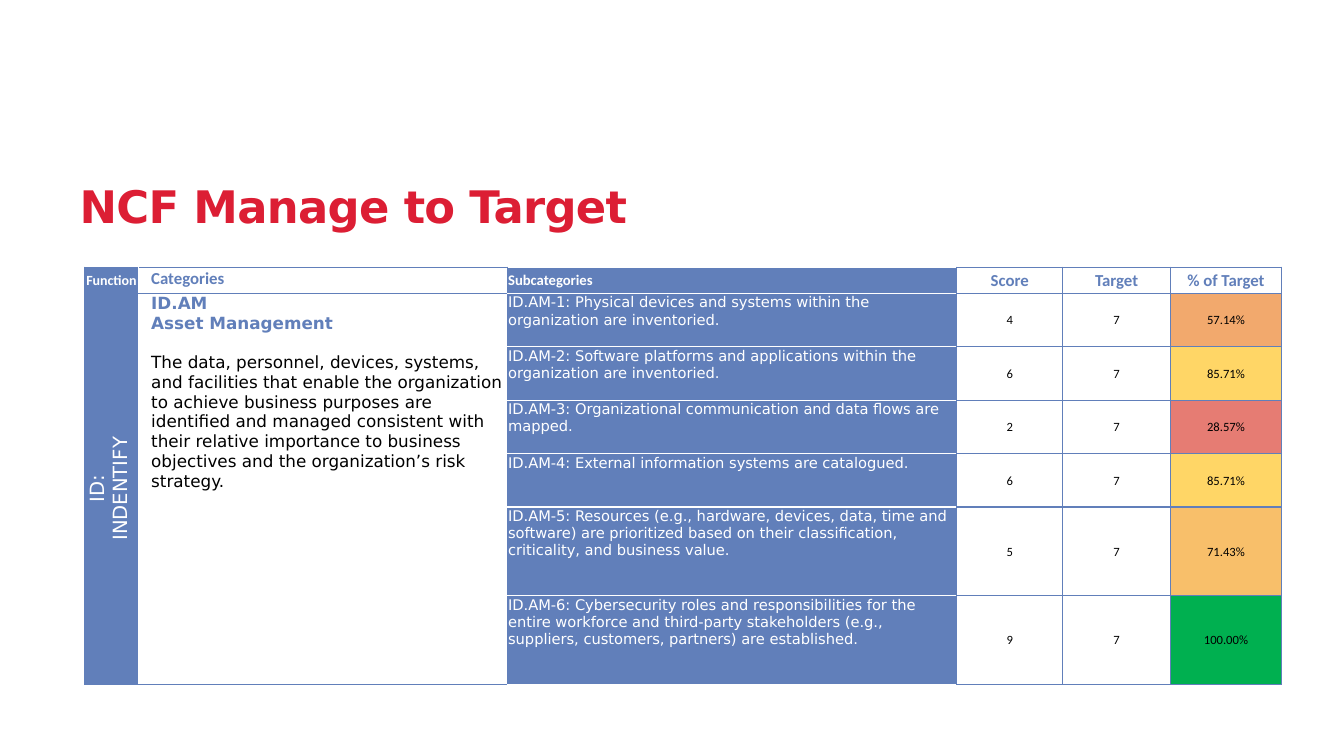
from lxml.etree import SubElement
from pptx import Presentation
from pptx.dml.color import RGBColor
from pptx.enum.text import MSO_ANCHOR, PP_ALIGN
from pptx.oxml.ns import qn
from pptx.util import Inches, Pt

BLUE, WHITE, BLACK, RED = "617FBA", "FFFFFF", "000000", "DC1E34"
SANS, CALIBRI = "DejaVu Sans", "Calibri"
COLS = [0.53, 3.66, 4.46, 1.05, 1.07, 1.1]
ROWS = [0.26] + [0.53] * 4 + [0.88] * 2
TARGET = 7

HEADS = [
    # label, size, colour, fill
    ("Function", 10, WHITE, BLUE),
    ("Categories", 12, BLUE, WHITE),
    ("Subcategories", 10.5, WHITE, BLUE),
    ("Score", 12, BLUE, WHITE),
    ("Target", 12, BLUE, WHITE),
    ("% of Target", 12, BLUE, WHITE),
]
ITEMS = [
    # subcategory, score, share of target, fill of the share
    ("Physical devices and systems within the organization are inventoried.",
     4, "57.14%", "F2A96D"),
    ("Software platforms and applications within the organization are inventoried.",
     6, "85.71%", "FFD666"),
    ("Organizational communication and data flows are mapped.",
     2, "28.57%", "E67C73"),
    ("External information systems are catalogued.",
     6, "85.71%", "FFD666"),
    ("Resources (e.g., hardware, devices, data, time and software) are prioritized "
     "based on their classification, criticality, and business value.",
     5, "71.43%", "F8BF6A"),
    ("Cybersecurity roles and responsibilities for the entire workforce and "
     "third-party stakeholders (e.g., suppliers, customers, partners) are established.",
     9, "100.00%", "00B050"),
]
ABOUT = ("The data, personnel, devices, systems, and facilities that enable the "
         "organization to achieve business purposes are identified and managed "
         "consistent with their relative importance to business objectives and "
         "the organization’s risk strategy.")

# Border colours by column: left, top, right, bottom
EDGES = {
    0: (BLUE, BLUE, WHITE, BLUE),
    1: (WHITE, BLUE, BLUE, BLUE),
    2: (BLUE, WHITE, BLUE, WHITE),
}


def color(code):
    return RGBColor.from_string(code)


def write(frame, text, size=12, font=SANS, ink=BLACK, bold=False,
          align=PP_ALIGN.LEFT, indent=0, before=0, more=False):
    """Write one paragraph; more=True adds it below the text already there."""
    para = frame.add_paragraph() if more else frame.paragraphs[0]
    para.alignment = align
    if before:
        para.space_before = Pt(before)
    if indent:
        props = para._p.get_or_add_pPr()
        props.set("marL", str(Inches(indent)))
        props.set("indent", "0")
    run = para.add_run()
    run.text = text
    run.font.size, run.font.name, run.font.bold = Pt(size), font, bold
    run.font.color.rgb = color(ink)
    return para


def style(cell, col, fill, anchor=MSO_ANCHOR.MIDDLE):
    """Set the borders, fill and margins of a cell and return its text frame."""
    props = cell._tc.get_or_add_tcPr()
    for side, ink in zip("LTRB", EDGES.get(col, (BLUE,) * 4)):
        # The schema wants the order left, right, top, bottom
        line = SubElement(props, qn(f"a:ln{side}"), w=str(Pt(1)))
        solid = SubElement(line, qn("a:solidFill"))
        SubElement(solid, qn("a:srgbClr"), val=ink)
    props.insert(1, props[2])
    cell.fill.solid()
    cell.fill.fore_color.rgb = color(fill)
    cell.margin_left = cell.margin_top = cell.margin_right = Inches(0.01)
    cell.margin_bottom = 0
    cell.vertical_anchor = anchor
    return cell.text_frame


def title(slide, left, top, width, height):
    frame = slide.shapes.add_textbox(
        Inches(left), Inches(top), Inches(width), Inches(height)).text_frame
    frame.word_wrap = True
    frame.vertical_anchor = MSO_ANCHOR.MIDDLE
    para = write(frame, "NCF Manage to Target", size=32, ink=RED, bold=True)
    para.line_spacing = 0.9
    para.runs[0].font._element.set("spc", "-50")


def header(grid):
    for col, (label, size, ink, fill) in enumerate(HEADS):
        anchor = MSO_ANCHOR.TOP if col == 1 else MSO_ANCHOR.MIDDLE
        frame = style(grid.cell(0, col), col, fill, anchor)
        align = PP_ALIGN.LEFT if col in (1, 2) else PP_ALIGN.CENTER
        write(frame, label, size=size, font=CALIBRI, ink=ink, bold=True,
              align=align, indent=0.12 if col == 1 else 0)


def spans(grid):
    """Fill the two columns that run down all the body rows."""
    last = len(ITEMS)
    for col, fill in enumerate((BLUE, WHITE)):
        for row in range(1, last + 1):
            style(grid.cell(row, col), col, fill,
                  MSO_ANCHOR.TOP if col else MSO_ANCHOR.MIDDLE)
        grid.cell(1, col).merge(grid.cell(last, col))

    # Function, turned to read upwards
    cell = grid.cell(1, 0)
    cell._tc.get_or_add_tcPr().set("vert", "vert270")
    for n, word in enumerate(("ID:", "INDENTIFY")):
        write(cell.text_frame, word, size=14, ink=WHITE,
              align=PP_ALIGN.CENTER, more=n > 0)

    # Category
    frame = grid.cell(1, 1).text_frame
    for n, word in enumerate(("ID.AM", "Asset Management")):
        write(frame, word, ink=BLUE, bold=True, indent=0.12, more=n > 0)
    write(frame, ABOUT, indent=0.12, before=14, more=True)


def body(grid):
    for row, (text, score, share, fill) in enumerate(ITEMS, 1):
        frame = style(grid.cell(row, 2), 2, BLUE, MSO_ANCHOR.TOP)
        write(frame, f"ID.AM-{row}: {text}", size=10.5, ink=WHITE)
        marks = ((score, WHITE), (TARGET, WHITE), (share, fill))
        for col, (mark, shade) in enumerate(marks, 3):
            frame = style(grid.cell(row, col), col, shade)
            write(frame, str(mark), size=9, font=CALIBRI, align=PP_ALIGN.CENTER)


def table(slide, left, top):
    grid = slide.shapes.add_table(
        len(ROWS), len(COLS), Inches(left), Inches(top),
        Inches(sum(COLS)), Inches(sum(ROWS))).table
    grid.first_row = grid.horz_banding = False
    for column, width in zip(grid.columns, COLS):
        column.width = Inches(width)
    for row, height in zip(grid.rows, ROWS):
        row.height = Inches(height)
    header(grid)
    spans(grid)
    body(grid)


def main():
    deck = Presentation()
    deck.slide_width, deck.slide_height = Inches(13.33), Inches(7.5)
    slide = deck.slides.add_slide(deck.slide_layouts[6])
    title(slide, 0.69, 1.49, 10.41, 1.17)
    table(slide, 0.84, 2.65)
    deck.save("out.pptx")


if __name__ == "__main__":
    main()
